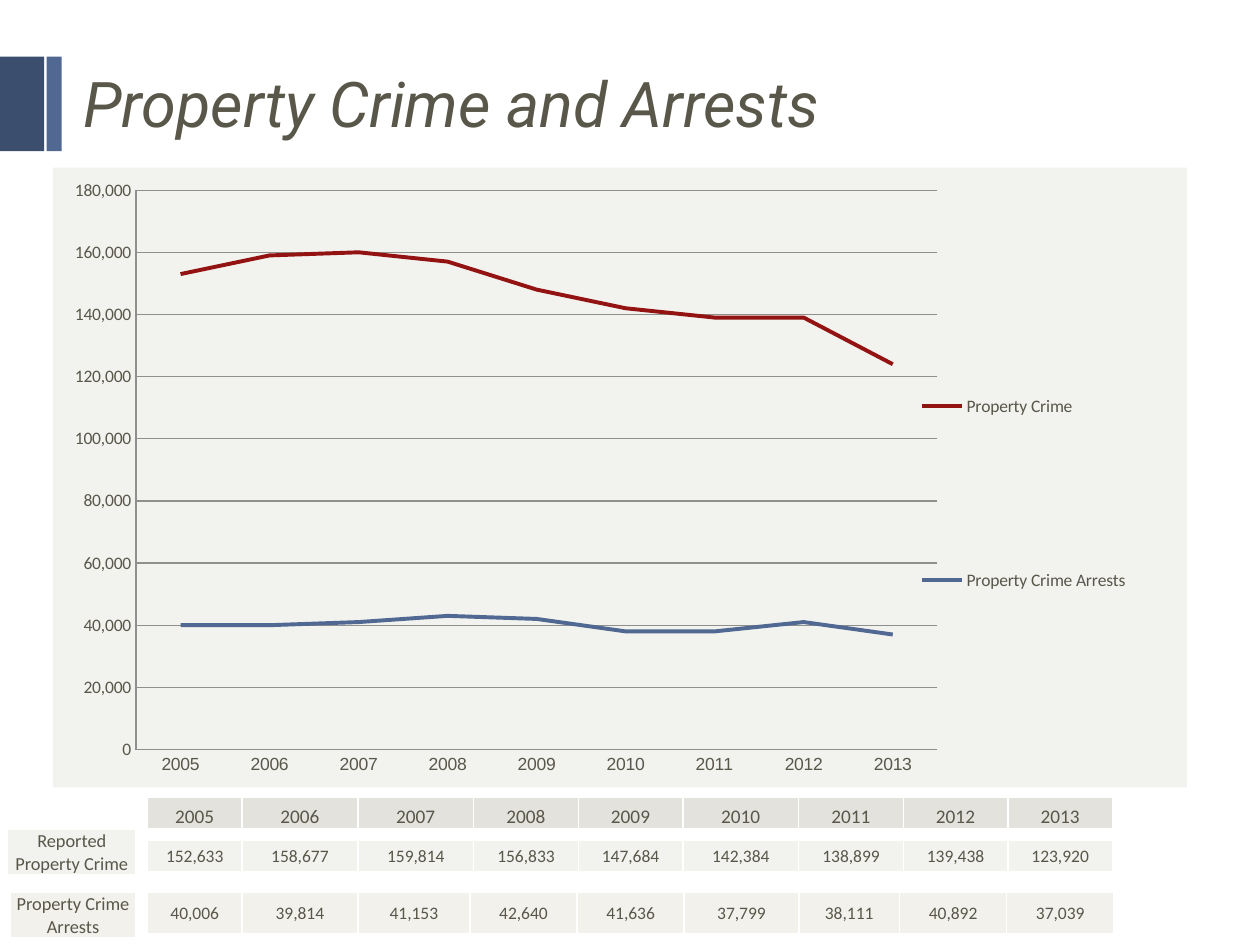
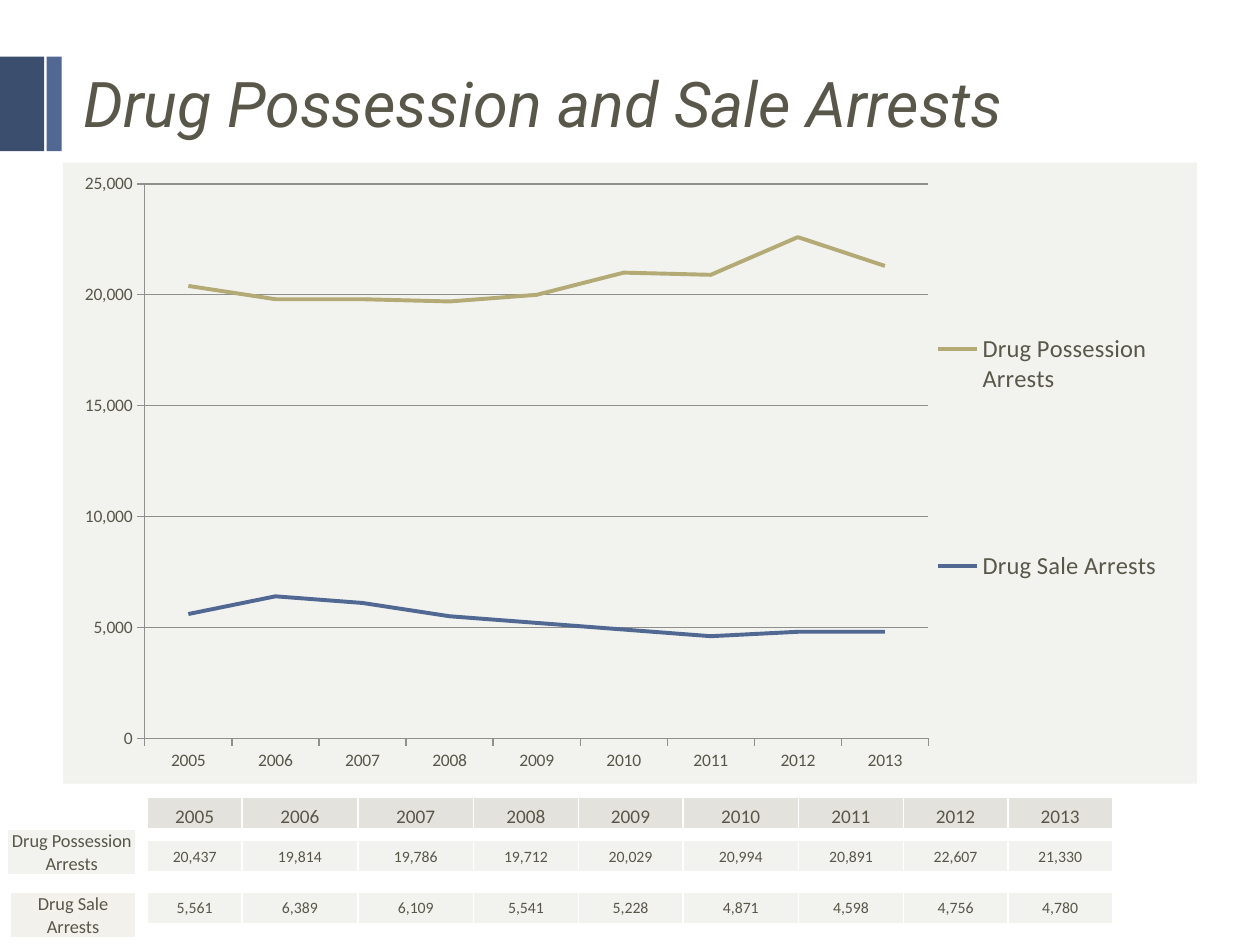
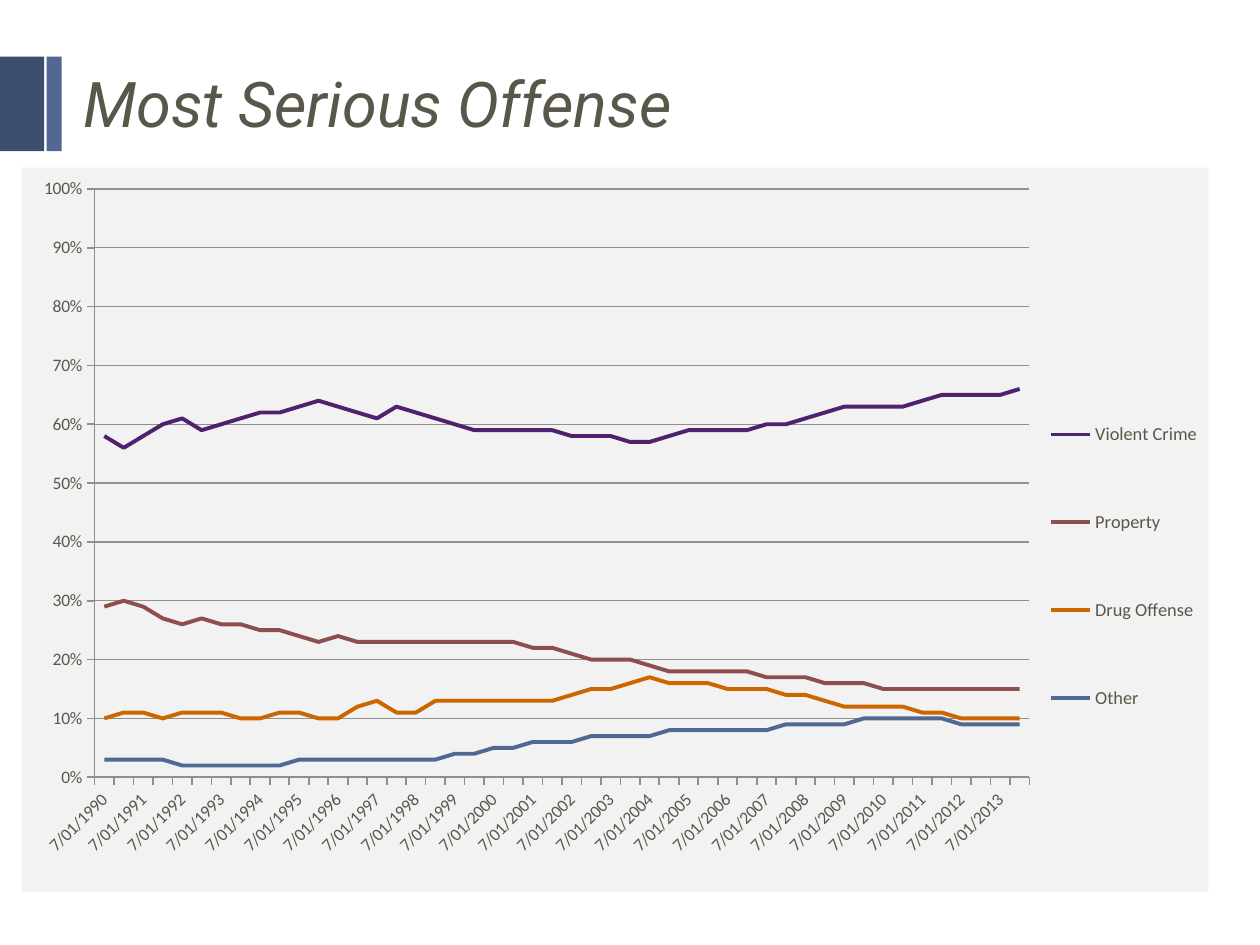
from lxml import etree
from pptx import Presentation
from pptx.chart.data import CategoryChartData
from pptx.dml.color import RGBColor
from pptx.enum.chart import XL_CHART_TYPE, XL_LEGEND_POSITION, XL_MARKER_STYLE, XL_TICK_MARK
from pptx.enum.shapes import MSO_SHAPE
from pptx.enum.text import MSO_ANCHOR, MSO_AUTO_SIZE, PP_ALIGN
from pptx.oxml.ns import qn
from pptx.util import Inches, Pt

LINE_CHART = XL_CHART_TYPE.LINE
LEGEND_RIGHT = XL_LEGEND_POSITION.RIGHT
NO_MARKER = XL_MARKER_STYLE.NONE
TICK_NONE, TICK_OUT = XL_TICK_MARK.NONE, XL_TICK_MARK.OUTSIDE
RECTANGLE = MSO_SHAPE.RECTANGLE
MIDDLE, BOTTOM = MSO_ANCHOR.MIDDLE, MSO_ANCHOR.BOTTOM
LEFT, CENTER = PP_ALIGN.LEFT, PP_ALIGN.CENTER
NO_AUTOFIT = MSO_AUTO_SIZE.NONE

WHITE = RGBColor(0xFF, 0xFF, 0xFF)
INK = RGBColor(0x59, 0x57, 0x49)
NAVY = RGBColor(0x3C, 0x4E, 0x6E)
BLUE = RGBColor(0x50, 0x68, 0x92)
RED = RGBColor(0x93, 0x12, 0x12)
KHAKI = RGBColor(0xB3, 0xAA, 0x75)
PURPLE = RGBColor(0x4F, 0x22, 0x70)
BROWN = RGBColor(0x8E, 0x4E, 0x4E)
ORANGE = RGBColor(0xCC, 0x66, 0x00)
AXIS_GRAY = RGBColor(0x8F, 0x8F, 0x8B)
HEADER_FILL = RGBColor(0xE3, 0xE2, 0xDD)
PANEL = RGBColor(0xF2, 0xF2, 0xEF)
WARM_PANEL = RGBColor(0xF2, 0xF1, 0xEC)
GRAY_PANEL = RGBColor(0xF2, 0xF2, 0xF2)

TITLE_FONT, BODY_FONT = "Roboto", "Calibri"
TITLE_BOX = (0.56, 0.44, 8.5, 0.75)
BAND_TOP, BAND_HEIGHT = 0.45, 0.75
BANDS = [(0, 0.35, NAVY), (0.37, 0.12, BLUE)]

YEARS = [str(year) for year in range(2005, 2014)]
YEAR_WIDTHS = [0.75, 0.92, 0.92, 0.83, 0.83, 0.92, 0.83, 0.83, 0.83]
ARREST_WIDTHS = [0.75, 0.92, 0.89, 0.85, 0.85, 0.91, 0.8, 0.85, 0.85]
TABLE_LEFT = 1.17

PROPERTY_CRIME = [152633, 158677, 159814, 156833, 147684, 142384, 138899, 139438, 123920]
PROPERTY_ARRESTS = [40006, 39814, 41153, 42640, 41636, 37799, 38111, 40892, 37039]
POSSESSION_ARRESTS = [20437, 19814, 19786, 19712, 20029, 20994, 20891, 22607, 21330]
SALE_ARRESTS = [5561, 6389, 6109, 5541, 5228, 4871, 4598, 4756, 4780]

HALF_YEARS = [f"{day}/{year}" for year in range(1990, 2014) for day in ("7/01", "12/31")]
OFFENSE_PERCENTS = [
    ("Violent Crime", PURPLE, [
        58, 56, 58, 60, 61, 59, 60, 61, 62, 62, 63, 64, 63, 62, 61, 63,
        62, 61, 60, 59, 59, 59, 59, 59, 58, 58, 58, 57, 57, 58, 59, 59,
        59, 59, 60, 60, 61, 62, 63, 63, 63, 63, 64, 65, 65, 65, 65, 66]),
    ("Property", BROWN, [
        29, 30, 29, 27, 26, 27, 26, 26, 25, 25, 24, 23, 24, 23, 23, 23,
        23, 23, 23, 23, 23, 23, 22, 22, 21, 20, 20, 20, 19, 18, 18, 18,
        18, 18, 17, 17, 17, 16, 16, 16, 15, 15, 15, 15, 15, 15, 15, 15]),
    ("Drug Offense", ORANGE, [
        10, 11, 11, 10, 11, 11, 11, 10, 10, 11, 11, 10, 10, 12, 13, 11,
        11, 13, 13, 13, 13, 13, 13, 13, 14, 15, 15, 16, 17, 16, 16, 16,
        15, 15, 15, 14, 14, 13, 12, 12, 12, 12, 11, 11, 10, 10, 10, 10]),
    ("Other", BLUE, [
        3, 3, 3, 3, 2, 2, 2, 2, 2, 2, 3, 3, 3, 3, 3, 3,
        3, 3, 4, 4, 5, 5, 6, 6, 6, 7, 7, 7, 7, 8, 8, 8,
        8, 8, 8, 9, 9, 9, 9, 10, 10, 10, 10, 10, 9, 9, 9, 9]),
]


def inches(box):
    """Convert a box of numbers to lengths."""
    return [Inches(length) for length in box]


def rounded(values, zeros):
    """Round whole numbers so that they end in the given count of zeros."""
    return [round(value, -zeros) for value in values]


def style_font(font, size, name=BODY_FONT, italic=False):
    """Apply the deck's text colour with a size and typeface."""
    font.size, font.name, font.italic = Pt(size), name, italic
    font.color.rgb = INK


def write_text(frame, text, size=10, name=BODY_FONT, italic=False, align=CENTER):
    """Write one formatted paragraph into a text frame."""
    frame.word_wrap = True
    paragraph = frame.paragraphs[0]
    paragraph.alignment = align
    run = paragraph.add_run()
    run.text = text
    style_font(run.font, size, name, italic)


def add_solid_fill(parent, color, alpha=None):
    """Append a solid fill element, optionally translucent."""
    fill = etree.SubElement(parent, qn("a:solidFill"))
    tint = etree.SubElement(fill, qn("a:srgbClr"), val=str(color))
    if alpha is not None:
        etree.SubElement(tint, qn("a:alpha"), val=str(alpha * 1000))


def add_titled_slide(prs, title_text):
    """Add a slide with the side bands and the italic title."""
    slide = prs.slides.add_slide(prs.slide_layouts[5])
    for left, width, color in BANDS:
        band = slide.shapes.add_shape(RECTANGLE, *inches((left, BAND_TOP, width, BAND_HEIGHT)))
        band.shadow.inherit = False
        band.fill.solid()
        band.fill.fore_color.rgb = color
        band.line.fill.background()
    title = slide.shapes.title
    title.left, title.top, title.width, title.height = inches(TITLE_BOX)
    add_solid_fill(title.element.spPr, WHITE, alpha=50)
    title.text_frame.auto_size = NO_AUTOFIT
    title.text_frame.vertical_anchor = MIDDLE
    write_text(title.text_frame, title_text, size=36, name=TITLE_FONT, italic=True, align=LEFT)
    return slide


def add_cell_borders(cell):
    """Put white one-point borders before the fill of a cell."""
    properties = cell._tc.get_or_add_tcPr()
    for index, side in enumerate(("a:lnL", "a:lnR", "a:lnT", "a:lnB")):
        border = etree.Element(qn(side), w=str(Pt(1)))
        add_solid_fill(border, WHITE)
        properties.insert(index, border)


def add_strip(slide, left, top, widths, height, texts, fill, size, anchor):
    """Add a one-row table with the given column widths."""
    box = inches((left, top, sum(widths), height))
    strip = slide.shapes.add_table(1, len(texts), *box).table
    strip.first_row = strip.horz_banding = False
    strip.rows[0].height = Inches(height)
    for index, (text, width) in enumerate(zip(texts, widths)):
        strip.columns[index].width = Inches(width)
        cell = strip.cell(0, index)
        cell.margin_left = cell.margin_right = cell.margin_top = Inches(0.01)
        cell.margin_bottom = 0
        cell.vertical_anchor = anchor
        cell.fill.solid()
        cell.fill.fore_color.rgb = fill
        add_cell_borders(cell)
        write_text(cell.text_frame, text, size=size)


def add_figures(slide, labels, rows, size, last_widths=YEAR_WIDTHS, last_height=0.25,
                last_fill=PANEL):
    """Add the year header, two row labels and two rows of figures."""
    first, last = [[f"{value:,}" for value in row] for row in rows]
    add_strip(slide, TABLE_LEFT, 6.33, YEAR_WIDTHS, 0.25, YEARS, HEADER_FILL, 11, BOTTOM)
    add_strip(slide, 0.06, 6.58, [1.02], 0.36, labels[:1], PANEL, 10.5, BOTTOM)
    add_strip(slide, TABLE_LEFT, 6.67, YEAR_WIDTHS, 0.25, first, PANEL, size, MIDDLE)
    add_strip(slide, 0.08, 7.08, [1], 0.36, labels[1:], WARM_PANEL, 10.5, BOTTOM)
    add_strip(slide, TABLE_LEFT, 7.08, last_widths, last_height, last, last_fill, size, MIDDLE)


def place_part(part, index, box, chart_size, inner=False):
    """Place a chart part at a box in inches from the chart's corner."""
    for old_layout in part.findall(qn("c:layout")):
        part.remove(old_layout)
    layout = etree.Element(qn("c:layout"))
    manual = etree.SubElement(layout, qn("c:manualLayout"))
    if inner:
        etree.SubElement(manual, qn("c:layoutTarget"), val="inner")
    for mode in ("xMode", "yMode"):
        etree.SubElement(manual, qn(f"c:{mode}"), val="edge")
    for key, length, whole in zip("xywh", box, chart_size * 2):
        etree.SubElement(manual, qn(f"c:{key}"), val=f"{length / whole:.4f}")
    part.insert(index, layout)


def style_axis(axis, tick, line_width, font_name=BODY_FONT):
    """Format an axis line, its ticks and its labels."""
    axis.major_tick_mark, axis.minor_tick_mark = tick, TICK_NONE
    axis.format.line.color.rgb = AXIS_GRAY
    axis.format.line.width = Pt(line_width)
    style_font(axis.tick_labels.font, 10, font_name)


def add_line_chart(slide, box, categories, series, plot_box, legend_box, maximum, step,
                   number_format="#,##0", tick=TICK_OUT, legend_size=10, panel=PANEL,
                   category_font=BODY_FONT, axis_width=0.75):
    """Add a line chart on a filled panel and return it."""
    data = CategoryChartData(number_format=number_format)
    data.categories = categories
    for name, _, values in series:
        data.add_series(name, values)
    chart = slide.shapes.add_chart(LINE_CHART, *inches(box), data).chart
    chart.has_title = False
    style_font(chart.font, 10)
    chart.plots[0].vary_by_categories = False
    for line, (_, color, _) in zip(chart.plots[0].series, series):
        line.smooth = False
        line.marker.style = NO_MARKER
        line.format.line.color.rgb = color
        line.format.line.width = Pt(2.25)

    style_axis(chart.category_axis, tick, axis_width, category_font)
    values_axis = chart.value_axis
    style_axis(values_axis, tick, axis_width)
    values_axis.minimum_scale, values_axis.maximum_scale = 0, maximum
    values_axis.major_unit = step
    values_axis.tick_labels.number_format = number_format
    values_axis.tick_labels.number_format_is_linked = False
    values_axis.has_major_gridlines = True
    gridline = values_axis.major_gridlines.format.line
    gridline.color.rgb, gridline.width = AXIS_GRAY, Pt(0.75)

    chart.has_legend = True
    chart.legend.position = LEGEND_RIGHT
    chart.legend.include_in_layout = False
    style_font(chart.legend.font, legend_size)

    chart_part = chart.element.find(qn("c:chart"))
    place_part(chart_part.find(qn("c:plotArea")), 0, plot_box, box[2:], inner=True)
    place_part(chart_part.find(qn("c:legend")), 1, legend_box, box[2:])
    background = etree.Element(qn("c:spPr"))
    add_solid_fill(background, panel)
    outline = etree.SubElement(background, qn("a:ln"))
    etree.SubElement(outline, qn("a:noFill"))
    chart_part.addnext(background)
    return chart


def slant_category_labels(chart, skip):
    """Turn the category labels by 45 degrees and show one in each skip."""
    axis = chart.element.find(f".//{qn('c:catAx')}")
    body = axis.find(f"{qn('c:txPr')}/{qn('a:bodyPr')}")
    body.set("rot", "-2700000")
    body.set("vert", "horz")
    label_skip = etree.Element(qn("c:tickLblSkip"), val=str(skip))
    axis.find(qn("c:lblOffset")).addnext(label_skip)


def build_property_slide(prs):
    """Build the slide on property crime and arrests."""
    slide = add_titled_slide(prs, "Property Crime and Arrests")
    series = [("Property Crime", RED, rounded(PROPERTY_CRIME, 3)),
              ("Property Crime Arrests", BLUE, rounded(PROPERTY_ARRESTS, 3))]
    add_line_chart(slide, (0.42, 1.33, 9, 4.92), YEARS, series,
                   plot_box=(0.66, 0.18, 6.36, 4.44), legend_box=(6.67, 0.59, 2.07, 3.99),
                   maximum=180000, step=20000, tick=TICK_NONE, category_font="Arial")
    add_figures(slide, ["Reported Property Crime", "Property Crime Arrests"],
                [PROPERTY_CRIME, PROPERTY_ARRESTS], size=10,
                last_widths=ARREST_WIDTHS, last_height=0.33, last_fill=WARM_PANEL)


def build_drug_slide(prs):
    """Build the slide on drug possession and sale arrests."""
    slide = add_titled_slide(prs, "Drug Possession and Sale Arrests")
    series = [("Drug Possession Arrests", KHAKI, rounded(POSSESSION_ARRESTS, 2)),
              ("Drug Sale Arrests", BLUE, rounded(SALE_ARRESTS, 2))]
    add_figures(slide, [name for name, _, _ in series],
                [POSSESSION_ARRESTS, SALE_ARRESTS], size=9)
    add_line_chart(slide, (0.5, 1.29, 9, 4.93), YEARS, series,
                   plot_box=(0.65, 0.17, 6.22, 4.4), legend_box=(6.82, 0.12, 1.98, 4.44),
                   maximum=25000, step=5000, legend_size=14)


def build_offense_slide(prs):
    """Build the slide on the most serious offense."""
    slide = add_titled_slide(prs, "Most Serious Offense")
    series = [(name, color, [percent / 100 for percent in percents])
              for name, color, percents in OFFENSE_PERCENTS]
    chart = add_line_chart(slide, (0.17, 1.33, 9.42, 5.75), HALF_YEARS, series,
                           plot_box=(0.58, 0.17, 7.42, 4.67),
                           legend_box=(8.11, 1.51, 1.28, 3.31),
                           maximum=1, step=0.1, number_format="0%", legend_size=10.5,
                           panel=GRAY_PANEL, axis_width=1)
    slant_category_labels(chart, skip=2)


def main():
    """Build the three slides and save them."""
    prs = Presentation()
    prs.slide_width, prs.slide_height = Inches(10), Inches(7.5)
    build_property_slide(prs)
    build_drug_slide(prs)
    build_offense_slide(prs)
    prs.save("out.pptx")


if __name__ == "__main__":
    main()
